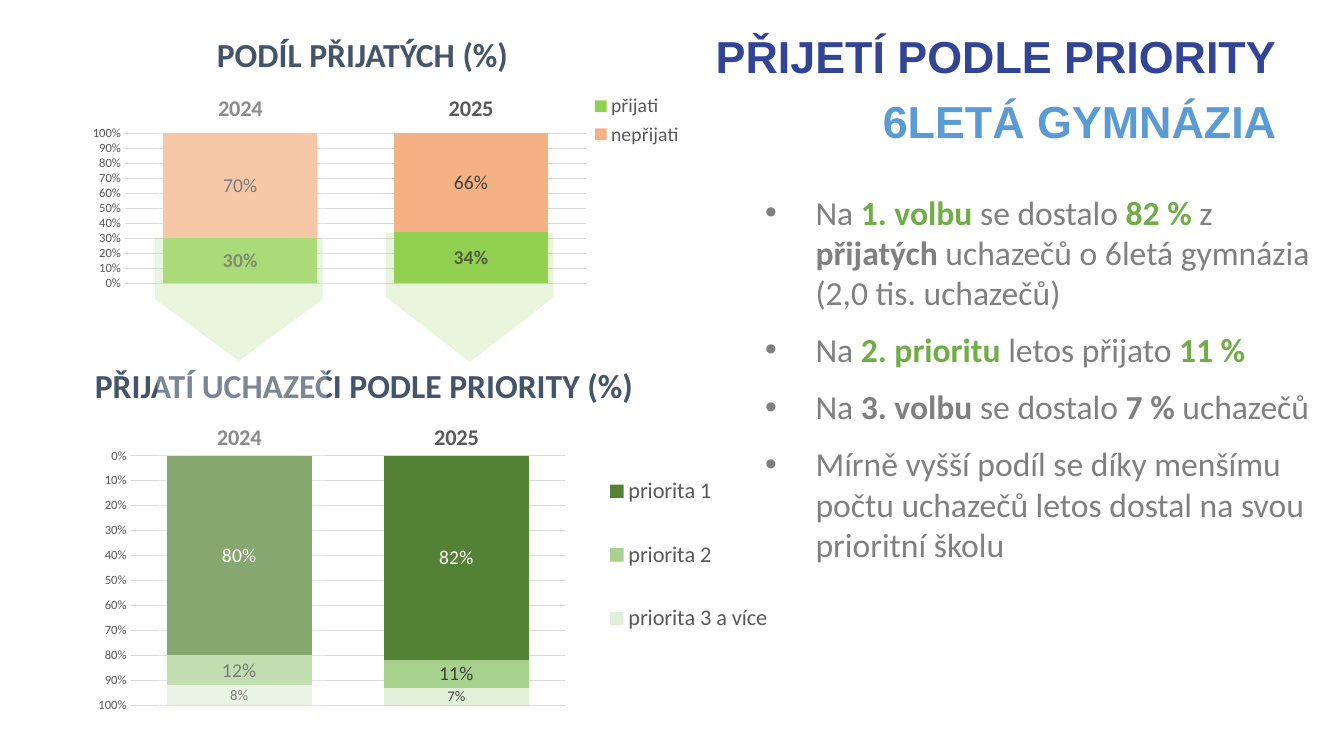
"""Slide on admissions by priority at six-year grammar schools."""
import lxml.etree
import pptx
import pptx.chart.data
import pptx.dml.color
import pptx.enum.chart
import pptx.enum.shapes
import pptx.enum.text
import pptx.oxml.ns
import pptx.util

Inches = pptx.util.Inches
qn = pptx.oxml.ns.qn
Align = pptx.enum.text.PP_ALIGN
Anchor = pptx.enum.text.MSO_ANCHOR
Tick = pptx.enum.chart.XL_TICK_MARK
Label = pptx.enum.chart.XL_TICK_LABEL_POSITION
Preset = pptx.enum.shapes.MSO_SHAPE

COLORS = {
    "white": "FFFFFF", "navy": "324496", "blue": "5B9BD5", "slate": "44546A",
    "gray": "808080", "axis": "595959", "label": "404040", "grid": "D9D9D9",
    "green": "70AD47", "lime": "92D050", "peach": "F4B183",
    "dark": "548235", "medium": "A9D18E", "light": "E2F0D9",
}


def set_font(font, size, color, bold=False, name="Calibri"):
    values = {"size": pptx.util.Pt(size), "bold": bold, "name": name}
    for key, value in values.items():
        setattr(font, key, value)
    font.color.rgb = pptx.dml.color.RGBColor.from_string(COLORS[color])


def make_layout(x, y, width, height, inner=False):
    layout = lxml.etree.Element(qn("c:layout"))
    manual = lxml.etree.SubElement(layout, qn("c:manualLayout"))
    settings = {"layoutTarget": "inner"} if inner else {}
    settings |= {"xMode": "edge", "yMode": "edge", "x": x, "y": y, "w": width, "h": height}
    for tag, value in settings.items():
        lxml.etree.SubElement(manual, qn("c:" + tag)).set("val", str(value))
    return layout


deck = pptx.Presentation()
deck.slide_width, deck.slide_height = Inches(13.33), Inches(7.5)
page = deck.slides.add_slide(deck.slide_layouts[6])

charts = [
    {
        "place": (0.33, 3.54, 7.43, 3.64), "plot": (0.13, 0.27, 0.58, 0.68),
        "legend": (0.75, 0.23, 0.25, 0.62), "legend_size": 16,
        "reverse": True, "labels": Label.NEXT_TO_AXIS,
        "series": [
            ("priorita 1", (0.80, 0.82), "dark", (14, "white")),
            ("priorita 2", (0.12, 0.11), "medium", (14, "label")),
            ("priorita 3 a více", (0.08, 0.07), "light", (10.5, "label")),
        ],
    },
    {
        "place": (0.55, 0.81, 6.27, 2.13), "plot": (0.11, 0.24, 0.73, 0.7),
        "legend": (0.84, 0.04, 0.16, 0.28), "legend_size": 14,
        "reverse": False, "labels": Label.HIGH,
        "series": [
            ("přijati", (0.30, 0.34), "lime", (14, "label", True)),
            ("nepřijati", (0.70, 0.66), "peach", (14, "label")),
        ],
    },
]
for item in charts:
    data = pptx.chart.data.CategoryChartData(number_format="0%")
    data.categories = ["2024", "2025"]
    for name, values, color, label in item["series"]:
        data.add_series(name, values)
    chart = page.shapes.add_chart(
        pptx.enum.chart.XL_CHART_TYPE.COLUMN_STACKED_100,
        *map(Inches, item["place"]), data).chart
    chart.has_title = False
    chart.font.name, chart.font.size = "Calibri", pptx.util.Pt(10)

    plot = chart.plots[0]
    plot.gap_width, plot.overlap, plot.vary_by_categories = 50, 100, False
    for series, (name, values, color, label) in zip(plot.series, item["series"]):
        series.format.fill.solid()
        series.format.fill.fore_color.rgb = pptx.dml.color.RGBColor.from_string(COLORS[color])
        labels = series.data_labels
        labels.show_value = True
        labels.number_format, labels.number_format_is_linked = "0%", False
        set_font(labels.font, *label)

    years, shares = chart.category_axis, chart.value_axis
    for axis in (years, shares):
        axis.major_tick_mark = axis.minor_tick_mark = Tick.NONE
    years.tick_label_position = item["labels"]
    set_font(years.tick_labels.font, 16, "axis", True)
    set_font(shares.tick_labels.font, 9, "axis")
    shares.tick_labels.number_format = "0%"
    shares.tick_labels.number_format_is_linked = False
    shares.reverse_order = item["reverse"]
    shares.minimum_scale, shares.maximum_scale, shares.major_unit = 0, 1, 0.1
    shares.format.line.fill.background()
    for line in (years.format.line, shares.major_gridlines.format.line):
        line.color.rgb = pptx.dml.color.RGBColor.from_string(COLORS["grid"])
        line.width = pptx.util.Pt(0.75)

    chart.has_legend = True
    chart.legend.position = pptx.enum.chart.XL_LEGEND_POSITION.BOTTOM
    chart.legend.include_in_layout = False
    set_font(chart.legend.font, item["legend_size"], "axis")
    root = chart.element if hasattr(chart, "element") else chart._chartSpace
    for tag in ("c:plotArea", "c:legend"):
        for old in root.find(".//" + qn(tag)).findall(qn("c:layout")):
            old.getparent().remove(old)
    root.find(".//" + qn("c:plotArea")).insert(0, make_layout(*item["plot"], inner=True))
    root.find(".//" + qn("c:legendPos")).addnext(make_layout(*item["legend"]))

plain, strong, green = ("gray", False), ("gray", True), ("green", True)
heading = {"alignment": Align.RIGHT, "line_spacing": 1.05, "space_after": pptx.util.Pt(6)}
bullet = {"space_before": pptx.util.Pt(12)}
centered = {"alignment": Align.CENTER}
texts = [
    ((0.55, 0.21, 12.21, 1.27), Anchor.TOP, heading, 32, "Arial", [
        [("PŘIJETÍ PODLE PRIORITY", "navy", True)],
        [("6LETÁ GYMNÁZIA", "blue", True)],
    ]),
    ((7.49, 1.85, 5.65, 3.84), Anchor.TOP, bullet, 24, "Calibri", [
        [("Na ", *plain), ("1. volbu ", *green), ("se dostalo ", *plain),
         ("82 % ", *green), ("z", *plain), (" přijatých ", *strong),
         ("uchazečů o 6letá gymnázia (2,0 tis. uchazečů)", *plain)],
        [("Na ", *plain), ("2. prioritu ", *green), ("letos přijato ", *plain),
         ("11 %", *green)],
        [("Na ", *plain), ("3. volbu", *strong), (" se dostalo ", *plain),
         ("7 %", *strong), (" uchazečů", *plain)],
        [("Mírně vyšší podíl se díky menšímu počtu uchazečů letos dostal "
          "na svou prioritní školu", *plain)],
    ]),
    ((0.5, 0.26, 6.19, 0.55), Anchor.MIDDLE, centered, 24, "Calibri",
     [[("PODÍL PŘIJATÝCH (%)", "slate", True)]]),
    ((0.36, 3.54, 6.5, 0.55), Anchor.MIDDLE, centered, 24, "Calibri",
     [[("PŘIJATÍ UCHAZEČI PODLE PRIORITY (%)", "slate", True)]]),
]
for place, anchor, layout, size, face, paragraphs in texts:
    frame = page.shapes.add_textbox(*map(Inches, place)).text_frame
    frame.word_wrap, frame.vertical_anchor = True, anchor
    for index, spans in enumerate(paragraphs):
        para = frame.add_paragraph() if index else frame.paragraphs[0]
        if layout is bullet:
            properties = para._p.get_or_add_pPr()
            properties.set("marL", str(Inches(0.5)))
            properties.set("indent", str(Inches(-0.5)))
            lxml.etree.SubElement(properties, qn("a:buFont")).set("typeface", "Arial")
            lxml.etree.SubElement(properties, qn("a:buChar")).set("char", "•")
        for key, value in layout.items():
            if index or key != "space_before":
                setattr(para, key, value)
        for words, color, bold in spans:
            span = para.add_run()
            span.text = words
            set_font(span.font, size, color, bold, face)

overlays = [
    (Preset.RECTANGLE, (1.56, 0.8, 1.68, 6.49), "white", 30),
    (Preset.DOWN_ARROW, (3.83, 2.31, 1.66, 1.28), "lime", 20),
    (Preset.DOWN_ARROW, (1.54, 2.36, 1.66, 1.22), "lime", 20),
]
for preset, place, color, opacity in overlays:
    shape = page.shapes.add_shape(preset, *map(Inches, place))
    shape.shadow.inherit = False
    shape.line.fill.background()
    shape.fill.solid()
    shape.fill.fore_color.rgb = pptx.dml.color.RGBColor.from_string(COLORS[color])
    tint = shape._element.spPr.find(".//" + qn("a:srgbClr"))
    lxml.etree.SubElement(tint, qn("a:alpha")).set("val", str(opacity * 1000))
    if preset == Preset.DOWN_ARROW:
        shape.adjustments[0], shape.adjustments[1] = 1, 0.5

deck.save("out.pptx")
